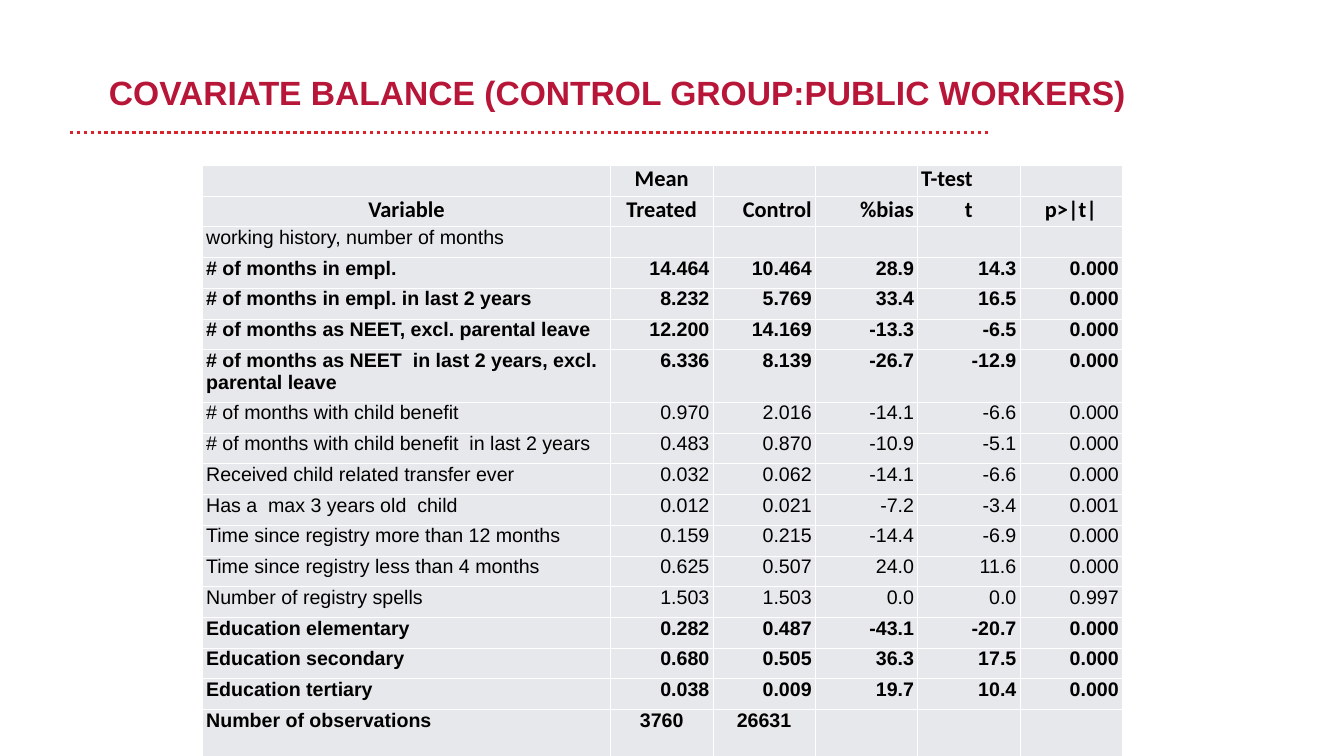
from lxml import etree
from pptx import Presentation
from pptx.dml.color import RGBColor
from pptx.enum import dml, shapes, text
from pptx.oxml import ns
from pptx.util import Inches, Pt

RED = RGBColor(0xB8, 0x16, 0x39)
RULE = RGBColor(0xD8, 0x22, 0x2C)
GREY = RGBColor(0xE7, 0xE8, 0xEB)
BLACK = RGBColor(0, 0, 0)

LEFT, MID, RIGHT = text.PP_ALIGN.LEFT, text.PP_ALIGN.CENTER, text.PP_ALIGN.RIGHT
COLS = [8.09] + [2.03] * 5
LOW, WRAP, LAST = 0.61, 1.04, 0.98

HEAD = [
    ["", "Mean", "", "", "T-test", ""],
    ["Variable", "Treated", "Control", "%bias", "t", "p>|t|"],
]
HEAD_ALIGN = [
    [LEFT, MID, LEFT, LEFT, LEFT, LEFT],
    [MID, MID, RIGHT, RIGHT, MID, MID],
]
BODY = [
    (False, "working history, number of months", ""),
    (True, "# of months in empl.", "14.464 10.464 28.9 14.3 0.000"),
    (True, "# of months in empl. in last 2 years", "8.232 5.769 33.4 16.5 0.000"),
    (True, "# of months as NEET, excl. parental leave", "12.200 14.169 -13.3 -6.5 0.000"),
    (True, "# of months as NEET  in last 2 years, excl. parental leave",
     "6.336 8.139 -26.7 -12.9 0.000"),
    (False, "# of months with child benefit", "0.970 2.016 -14.1 -6.6 0.000"),
    (False, "# of months with child benefit  in last 2 years", "0.483 0.870 -10.9 -5.1 0.000"),
    (False, "Received child related transfer ever", "0.032 0.062 -14.1 -6.6 0.000"),
    (False, "Has a  max 3 years old  child", "0.012 0.021 -7.2 -3.4 0.001"),
    (False, "Time since registry more than 12 months", "0.159 0.215 -14.4 -6.9 0.000"),
    (False, "Time since registry less than 4 months", "0.625 0.507 24.0 11.6 0.000"),
    (False, "Number of registry spells", "1.503 1.503 0.0 0.0 0.997"),
    (True, "Education elementary", "0.282 0.487 -43.1 -20.7 0.000"),
    (True, "Education secondary", "0.680 0.505 36.3 17.5 0.000"),
    (True, "Education tertiary", "0.038 0.009 19.7 10.4 0.000"),
    (True, "Number of observations", "3760 26631"),
]


def style(font, color, **look):
    for name, value in look.items():
        setattr(font, name, value)
    font.color.rgb = color


def add_title(slide):
    title = slide.shapes.title
    place = {"left": 2.16, "top": 1.43, "width": 22.69, "height": 0.81}
    for name, value in place.items():
        setattr(title, name, Inches(value))
    frame = title.text_frame
    look = {"margin_left": 0, "margin_right": 0, "margin_top": 0, "margin_bottom": 0,
            "word_wrap": True, "vertical_anchor": text.MSO_ANCHOR.MIDDLE,
            "auto_size": text.MSO_AUTO_SIZE.SHAPE_TO_FIT_TEXT}
    for name, value in look.items():
        setattr(frame, name, value)
    para = frame.paragraphs[0]
    para.alignment = LEFT
    run = para.add_run()
    run.text = "COVARIATE BALANCE (CONTROL GROUP:PUBLIC WORKERS)"
    style(run.font, RED, name="Arial", size=Pt(48), bold=True)


def add_rule(slide):
    rule = slide.shapes.add_connector(
        shapes.MSO_CONNECTOR.STRAIGHT, Inches(1.38), Inches(2.63), Inches(19.62), Inches(2.63))
    rule.line.color.rgb = RULE
    rule.line.width = Pt(5)
    rule.line.dash_style = dml.MSO_LINE.ROUND_DOT
    etree.SubElement(rule.element.spPr, ns.qn("a:effectLst"))


def add_edges(cell):
    props = cell._tc.get_or_add_tcPr()
    for side in ("lnL", "lnR", "lnT", "lnB"):
        edge = etree.SubElement(props, ns.qn("a:" + side), w=str(Pt(1)))
        fill = etree.SubElement(edge, ns.qn("a:solidFill"))
        etree.SubElement(fill, ns.qn("a:srgbClr"), val="FFFFFF")


def fill_cell(cell, words, align, face, size, bold):
    add_edges(cell)
    cell.fill.solid()
    cell.fill.fore_color.rgb = GREY
    cell.margin_left = cell.margin_right = Inches(0.07)
    cell.margin_top = cell.margin_bottom = 0
    para = cell.text_frame.paragraphs[0]
    para.alignment = align
    if words:
        run = para.add_run()
        run.text = words
        style(run.font, BLACK, name=face, size=Pt(size), bold=bold)


def list_rows():
    for words, aligns in zip(HEAD, HEAD_ALIGN):
        yield words, aligns, "Calibri", 32, True
    for bold, label, data in BODY:
        values = data.split()
        align = MID if len(values) == 2 else RIGHT
        words = [label] + values + [""] * (5 - len(values))
        yield words, [LEFT] + [align] * 5, "Arial", 28, bold


def add_grid(slide):
    rows = list(list_rows())
    heights = [LOW] * len(rows)
    heights[6], heights[-1] = WRAP, LAST
    table = slide.shapes.add_table(
        len(rows), len(COLS), Inches(4.02), Inches(3.28),
        Inches(sum(COLS)), Inches(sum(heights))).table
    table.first_row = table.horz_banding = False
    for col, width in zip(table.columns, COLS):
        col.width = Inches(width)
    for row, height, (words, aligns, face, size, bold) in zip(table.rows, heights, rows):
        row.height = Inches(height)
        for cell, word, align in zip(row.cells, words, aligns):
            fill_cell(cell, word, align, face, size, bold)


def main():
    deck = Presentation()
    deck.slide_width, deck.slide_height = Inches(26.66), Inches(15)
    slide = deck.slides.add_slide(deck.slide_layouts[5])
    add_rule(slide)
    add_title(slide)
    add_grid(slide)
    deck.save("out.pptx")


if __name__ == "__main__":
    main()
